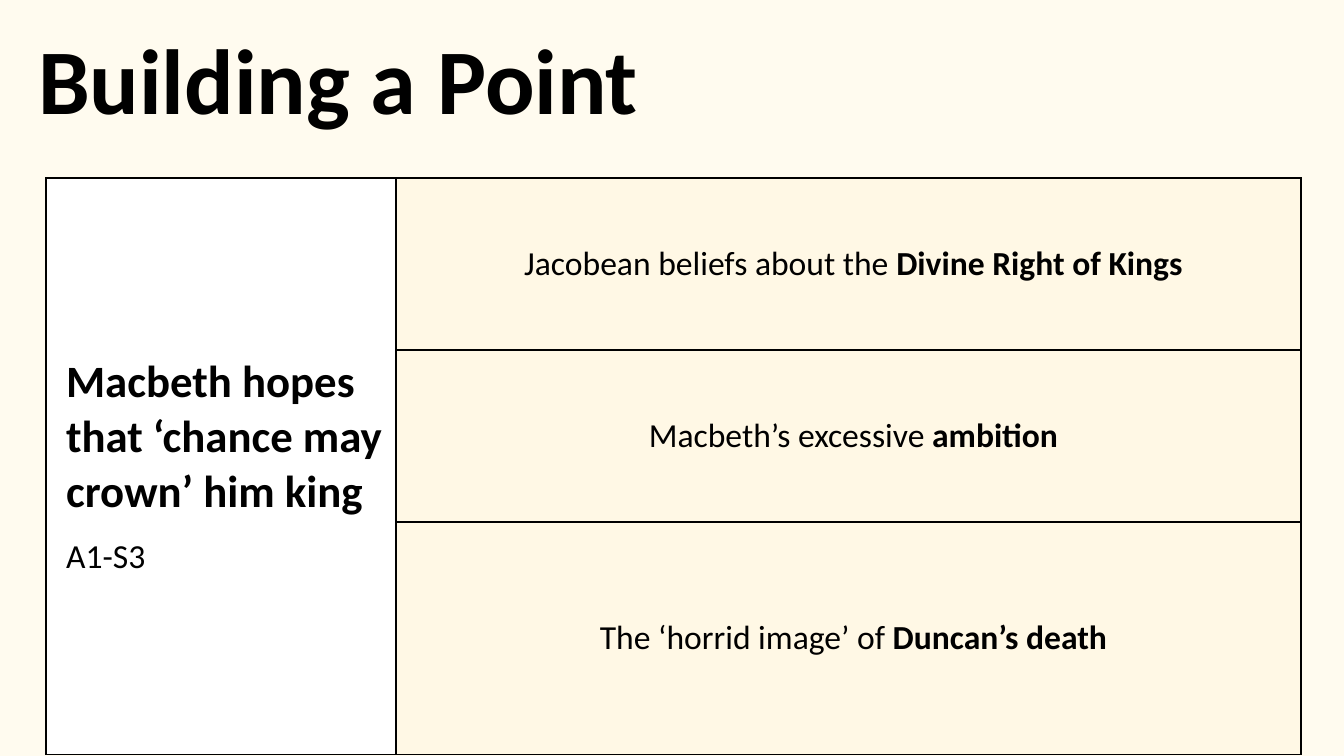
"""Build the "Building a Point" slide: one quotation set against three ideas."""
from lxml.etree import SubElement
from pptx import Presentation
from pptx.dml.color import RGBColor as Rgb
from pptx.enum.text import MSO_ANCHOR as Anchor, MSO_AUTO_SIZE as Fit, PP_ALIGN as Align
from pptx.oxml.ns import qn
from pptx.util import Pt

TITLE = "Building a Point"
QUOTE = [("Macbeth hopes that ‘chance may crown’ him king", 32, True), ("A1-S3", 24, False)]
IDEAS = [
    ("Jacobean beliefs about the ", "Divine Right of Kings"),
    ("Macbeth’s excessive ", "ambition"),
    ("The ‘horrid image’ of ", "Duncan’s death"),
]
HEX = {"page": "FFFBEF", "quote": "FFFFFF", "idea": "FFF8E5", "ink": "000000"}
FONT = "Calibri"
SIZE = (1344, 756)
HEAD = (28, 17, 1284, 156)
GRID = (46, 178)
COLS = (350, 905)
ROWS = (172, 172, 228)


def px(num):
    return round(num * 914400 / 100.8)


def rgb(name):
    return Rgb.from_string(HEX[name])


def style(run, size, bold):
    font = run.font
    font.name, font.size, font.bold = FONT, Pt(size), bold
    font.color.rgb = rgb("ink")


def indent(para):
    props = para._p.get_or_add_pPr()
    props.set("marL", str(px(10)))
    props.set("indent", "0")


def frame(cell, name):
    cell.vertical_anchor = Anchor.MIDDLE
    props = cell._tc.get_or_add_tcPr()
    for side in ("lnL", "lnR", "lnT", "lnB"):
        line = SubElement(props, qn(f"a:{side}"), w=str(Pt(1)))
        ink = SubElement(line, qn("a:solidFill"))
        SubElement(ink, qn("a:srgbClr"), val=HEX["ink"])
    cell.fill.solid()
    cell.fill.fore_color.rgb = rgb(name)


def add_title(slide):
    title = slide.shapes.title
    title.left, title.top, title.width, title.height = map(px, HEAD)
    text = title.text_frame
    text.text = TITLE
    text.word_wrap = True
    text.auto_size = Fit.NONE
    text.vertical_anchor = Anchor.TOP
    para = text.paragraphs[0]
    para.alignment = Align.LEFT
    style(para.runs[0], 66, True)


def add_grid(slide):
    box = map(px, (*GRID, sum(COLS), sum(ROWS)))
    table = slide.shapes.add_table(len(ROWS), len(COLS), *box).table
    table.first_row = table.horz_banding = False
    for col, wide in zip(table.columns, COLS):
        col.width = px(wide)
    for row, high in zip(table.rows, ROWS):
        row.height = px(high)
        for cell, name in zip(row.cells, ("quote", "idea")):
            frame(cell, name)

    quote = table.cell(0, 0)
    quote.merge(table.cell(len(ROWS) - 1, 0))
    quote.text_frame.text = "\n".join(text for text, _, _ in QUOTE)
    for para, (_, size, bold) in zip(quote.text_frame.paragraphs, QUOTE):
        indent(para)
        style(para.runs[0], size, bold)
    quote.text_frame.paragraphs[1].space_before = Pt(12)

    for num, parts in enumerate(IDEAS):
        para = table.cell(num, 1).text_frame.paragraphs[0]
        para.alignment = Align.CENTER
        indent(para)
        for text, bold in zip(parts, (False, True)):
            run = para.add_run()
            run.text = text
            style(run, 24, bold)


def main():
    deck = Presentation()
    deck.slide_width, deck.slide_height = map(px, SIZE)
    slide = deck.slides.add_slide(deck.slide_layouts[5])
    slide.background.fill.solid()
    slide.background.fill.fore_color.rgb = rgb("page")
    add_title(slide)
    add_grid(slide)
    deck.save("out.pptx")


if __name__ == "__main__":
    main()
